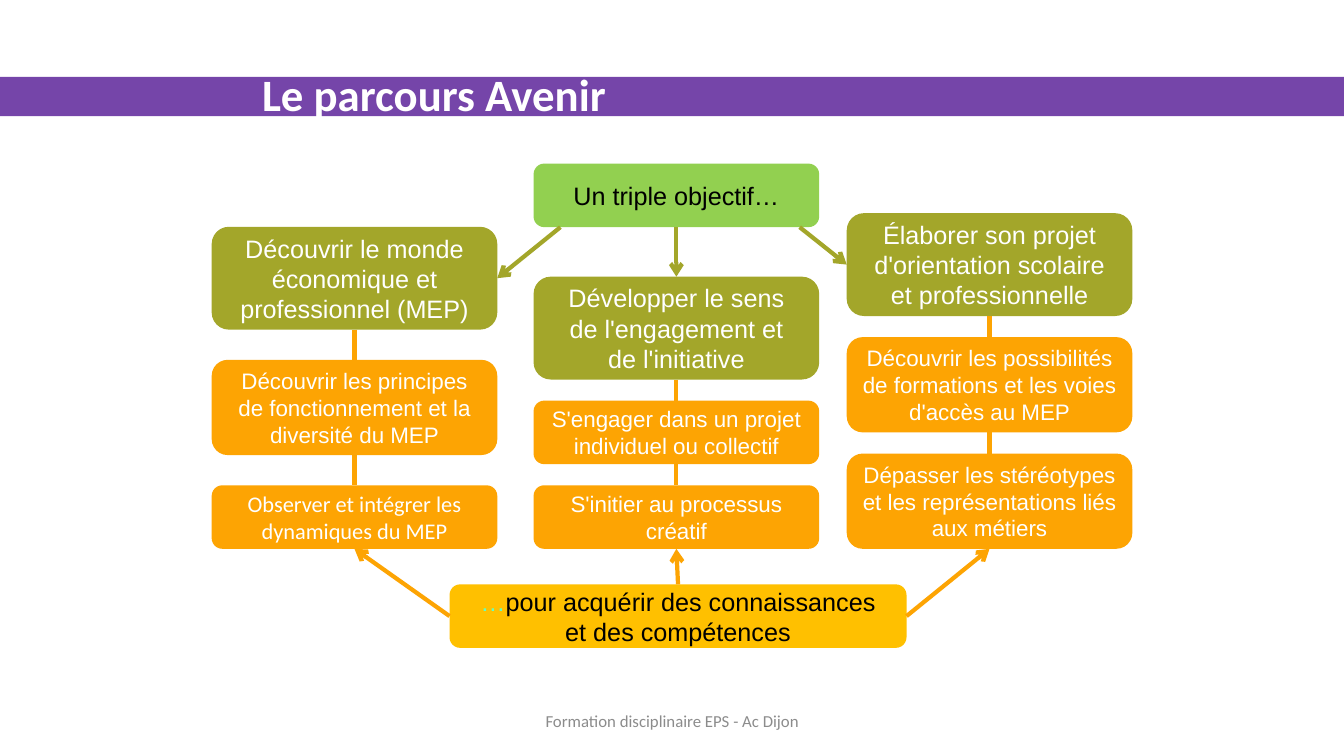
from lxml import etree
from pptx import Presentation
from pptx.dml.color import RGBColor
from pptx.enum.shapes import MSO_CONNECTOR, MSO_SHAPE
from pptx.enum.text import MSO_ANCHOR, MSO_AUTO_SIZE, PP_ALIGN
from pptx.oxml.ns import qn
from pptx.util import Inches, Pt

STRAIGHT = MSO_CONNECTOR.STRAIGHT
RECTANGLE = MSO_SHAPE.RECTANGLE
ROUNDED = MSO_SHAPE.ROUNDED_RECTANGLE
MIDDLE = MSO_ANCHOR.MIDDLE
NO_AUTOFIT = MSO_AUTO_SIZE.NONE
LEFT, CENTER = PP_ALIGN.LEFT, PP_ALIGN.CENTER
TOP_SIDE, LEFT_SIDE, BOTTOM_SIDE, RIGHT_SIDE = range(4)
TITLE_ONLY = 5

COLORS = {
    "band": "7545A9",
    "start": "92D050",
    "goal": "A3A62A",
    "step": "FDA403",
    "result": "FFC000",
    "mint": "66FFC2",
    "gray": "8C8C8C",
    "white": "FFFFFF",
    "black": "000000",
}

COLUMN_WIDTH = 21.25
COLUMN_BOTTOM = 72.6
LABEL_HEIGHT, STEP_HEIGHT, GOAL_HEIGHT = 8.4, 12.6, 13.6

COLUMNS = [
    (15.75, 4, [
        ("Découvrir le monde économique et professionnel (MEP)", GOAL_HEIGHT, "Arial"),
        ("Découvrir les principes de fonctionnement et la diversité du MEP", STEP_HEIGHT, "Arial"),
        ("Observer et intégrer les dynamiques du MEP", LABEL_HEIGHT, "Calibri"),
    ]),
    (39.7, 2.8, [
        ("Développer le sens\vde l'engagement et\vde l'initiative", GOAL_HEIGHT, "Arial"),
        ("S'engager dans un projet individuel ou collectif", LABEL_HEIGHT, "Arial"),
        ("S'initier au processus créatif", LABEL_HEIGHT, "Arial"),
    ]),
    (63, 2.8, [
        ("Élaborer son projet d'orientation scolaire et professionnelle", GOAL_HEIGHT, "Arial"),
        ("Découvrir les possibilités de formations et les voies d'accès au MEP", STEP_HEIGHT, "Arial"),
        ("Dépasser les stéréotypes et les représentations liés aux métiers", STEP_HEIGHT, "Arial"),
    ]),
]


class SlideBuilder:
    def __init__(self, presentation):
        self.width = presentation.slide_width
        self.height = presentation.slide_height
        self.slide = presentation.slides.add_slide(presentation.slide_layouts[TITLE_ONLY])
        self.shapes = self.slide.shapes

    def color(self, name):
        return RGBColor.from_string(COLORS[name])

    def across(self, percent):
        return round(self.width * percent / 100)

    def down(self, percent):
        return round(self.height * percent / 100)

    def place(self, left, top, width, height):
        return self.across(left), self.down(top), self.across(width), self.down(height)

    def label(self, shape, text, size, font, color, alignment=CENTER, bold=False):
        frame = shape.text_frame
        frame.text = text
        frame.word_wrap = True
        frame.auto_size = NO_AUTOFIT
        frame.vertical_anchor = MIDDLE
        paragraph = frame.paragraphs[0]
        paragraph.alignment = alignment
        paragraph.font.size = Pt(size)
        paragraph.font.name = font
        paragraph.font.bold = bold
        paragraph.font.color.rgb = self.color(color)
        return paragraph

    def block(self, kind, fill, *area):
        shape = self.shapes.add_shape(kind, *self.place(*area))
        shape.shadow.inherit = False
        shape.fill.solid()
        shape.fill.fore_color.rgb = self.color(fill)
        shape.line.fill.background()
        return shape

    def title(self, text, *area):
        title = self.shapes.title
        title.left, title.top, title.width, title.height = self.place(*area)
        self.label(title, text, 32, "Calibri", "white", LEFT, True)
        return title

    def caption(self, text, *area):
        box = self.shapes.add_textbox(*self.place(*area))
        self.label(box, text, 12, "Calibri", "gray")

    def link(self, color, start, end, arrow=True):
        line = self.shapes.add_connector(STRAIGHT, 0, 0, 0, 0)
        first, second = start
        if isinstance(first, (int, float)):
            line.begin_x, line.begin_y = self.across(first), self.down(second)
        else:
            line.begin_connect(first, second)
        line.end_connect(*end)
        line.line.color.rgb = self.color(color)
        line.line.width = Pt(3)
        properties = line.element.spPr
        if arrow:
            etree.SubElement(properties.find(qn("a:ln")), qn("a:tailEnd"), type="arrow")
        etree.SubElement(properties, qn("a:effectLst"))

    def column(self, left, gap, entries):
        top = COLUMN_BOTTOM - sum(height for _, height, _ in entries) - gap * (len(entries) - 1)
        boxes = []
        for text, height, font in entries:
            fill, size = ("step", 16) if boxes else ("goal", 18)
            box = self.block(ROUNDED, fill, left, top, COLUMN_WIDTH, height)
            self.label(box, text, size, font, "white")
            if boxes:
                self.link("step", (boxes[-1], BOTTOM_SIDE), (box, TOP_SIDE), arrow=False)
            boxes.append(box)
            top += height + gap
        return boxes


def main():
    presentation = Presentation()
    presentation.slide_width = Inches(13.33)
    presentation.slide_height = Inches(7.5)
    builder = SlideBuilder(presentation)

    band = builder.block(RECTANGLE, "band", 0, 10.15, 100, 5.2)
    title = builder.title("Le parcours Avenir", 18.75, 8.95, 65.5, 6.9)
    band.element.addnext(title.element)

    objective = builder.block(ROUNDED, "start", 39.7, 21.65, COLUMN_WIDTH, LABEL_HEIGHT)
    builder.label(objective, "Un triple objectif…", 18, "Arial", "black")

    result = builder.block(ROUNDED, "result", 33.45, 77.3, 34, LABEL_HEIGHT)
    paragraph = builder.label(result, "…", 18, "Arial", "black")
    paragraph.runs[0].font.color.rgb = builder.color("mint")
    paragraph.add_run().text = "pour acquérir des connaissances"
    paragraph.add_line_break()
    paragraph.add_run().text = "et des compétences"

    objective_bottom = 21.65 + LABEL_HEIGHT
    starts = [(41.7, objective_bottom), (objective, BOTTOM_SIDE), (59.5, objective_bottom)]
    goal_sides = [RIGHT_SIDE, TOP_SIDE, LEFT_SIDE]
    result_sides = [LEFT_SIDE, TOP_SIDE, RIGHT_SIDE]
    for column, start, goal_side, result_side in zip(COLUMNS, starts, goal_sides, result_sides):
        boxes = builder.column(*column)
        builder.link("goal", start, (boxes[0], goal_side))
        builder.link("step", (result, result_side), (boxes[-1], BOTTOM_SIDE))

    builder.caption("Formation disciplinaire EPS - Ac Dijon", 34.2, 92.7, 31.65, 5.3)
    presentation.save("out.pptx")


if __name__ == "__main__":
    main()
